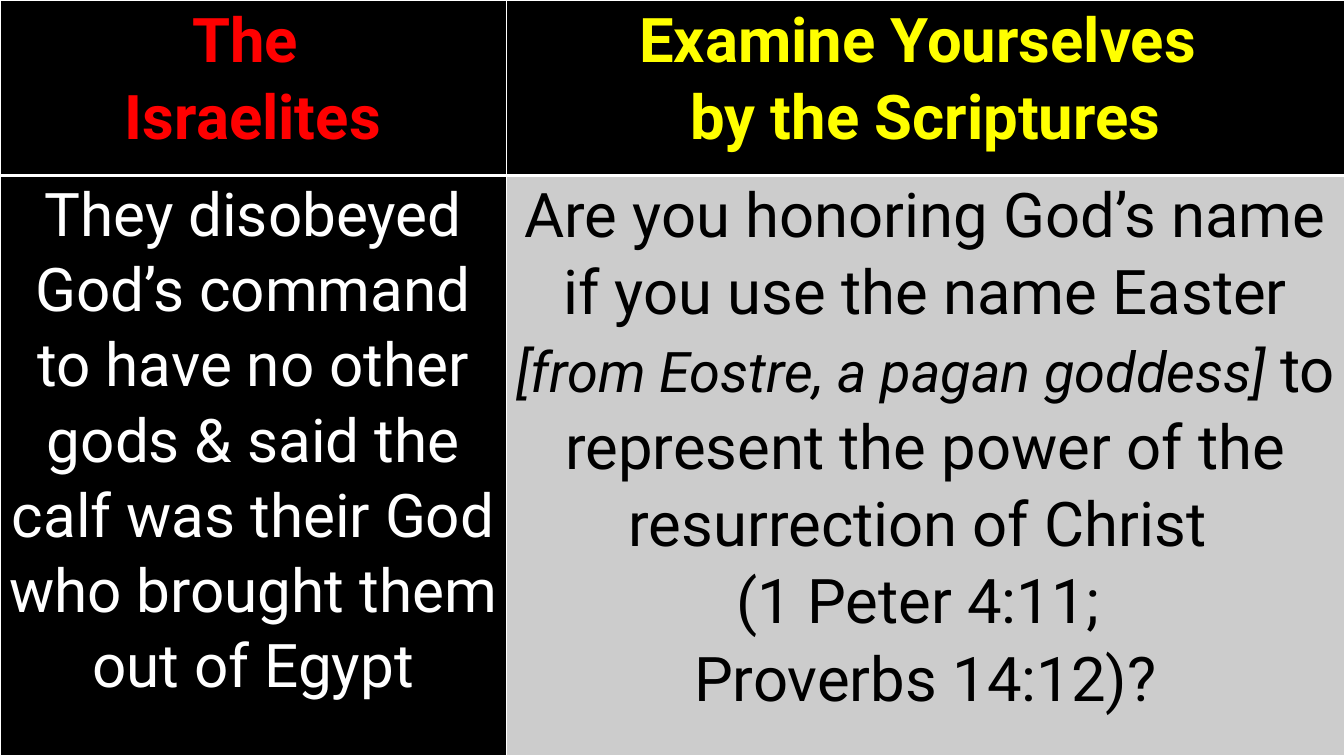
from pptx import Presentation
from pptx.dml.color import RGBColor
from pptx.enum.text import PP_ALIGN
from pptx.oxml import parse_xml
from pptx.oxml.ns import nsdecls
from pptx.util import Inches, Pt

BLACK = RGBColor(0, 0, 0)
WHITE = RGBColor(255, 255, 255)
RED = RGBColor(255, 0, 0)
YELLOW = RGBColor(255, 255, 0)
GRAY = RGBColor(204, 204, 204)

HEAD = {"size": Pt(44), "bold": True}
BODY = {"size": Pt(44), "bold": False}
SMALLER = {"size": Pt(43), "bold": False}
ASIDE = {"size": Pt(40), "bold": False, "italic": True}

COLUMNS = [5.02, 8.32]
ROWS = [1.74, 5.76]
CELLS = [
    [
        (BLACK, RED, [[("The ", HEAD)], [("Israelites", HEAD)]]),
        (BLACK, YELLOW, [[("Examine Yourselves ", HEAD)],
                         [("by the Scriptures", HEAD)]]),
    ],
    [
        (BLACK, WHITE, [[("They disobeyed God’s command to have no other gods "
                          "& said the calf was their God who brought them "
                          "out of Egypt", SMALLER)]]),
        (GRAY, BLACK, [
            [("Are you honoring God’s name if you use the name Easter ", BODY),
             ("[from Eostre, a pagan goddess] ", ASIDE),
             ("to represent the power of the resurrection of Christ ", BODY)],
            [("(1 Peter 4:11; ", BODY)],
            [("Proverbs 14:12)?", BODY)],
        ]),
    ],
]
MARGINS = {"margin_left": Inches(0.07), "margin_right": Inches(0.07),
           "margin_top": 0, "margin_bottom": 0}


def set_borders(cell, widths):
    tcPr = cell._tc.get_or_add_tcPr()
    for i, (side, width) in enumerate(widths.items()):
        tcPr.insert(i, parse_xml(
            f'<a:ln{side} {nsdecls("a")} w="{Pt(width)}"><a:solidFill>'
            f'<a:srgbClr val="{WHITE}"/></a:solidFill></a:ln{side}>'))


def fill_cell(cell, fill, color, paragraphs):
    for name, value in MARGINS.items():
        setattr(cell, name, value)
    cell.fill.solid()
    cell.fill.fore_color.rgb = fill
    tf = cell.text_frame
    for i, runs in enumerate(paragraphs):
        p = tf.add_paragraph() if i else tf.paragraphs[0]
        p.alignment = PP_ALIGN.CENTER
        p.line_spacing = 1.07
        for words, style in runs:
            r = p.add_run()
            r.text = words
            r.font.name = "Roboto"
            r.font.color.rgb = color
            for name, value in style.items():
                setattr(r.font, name, value)


prs = Presentation()
prs.slide_width = Inches(13.33)
prs.slide_height = Inches(7.5)
s = prs.slides.add_slide(prs.slide_layouts[6])
s.background.fill.solid()
s.background.fill.fore_color.rgb = BLACK

table = s.shapes.add_table(len(ROWS), len(COLUMNS), 0, 0,
                           Inches(sum(COLUMNS)), Inches(sum(ROWS))).table
for column, width in zip(table.columns, COLUMNS):
    column.width = Inches(width)
for row, height in zip(table.rows, ROWS):
    row.height = Inches(height)
for i, line in enumerate(CELLS):
    top, bottom = (1, 3) if i == 0 else (3, 1)
    for j, content in enumerate(line):
        fill_cell(table.cell(i, j), *content)
        set_borders(table.cell(i, j), {"L": 1, "R": 1, "T": top, "B": bottom})

prs.save("out.pptx")
